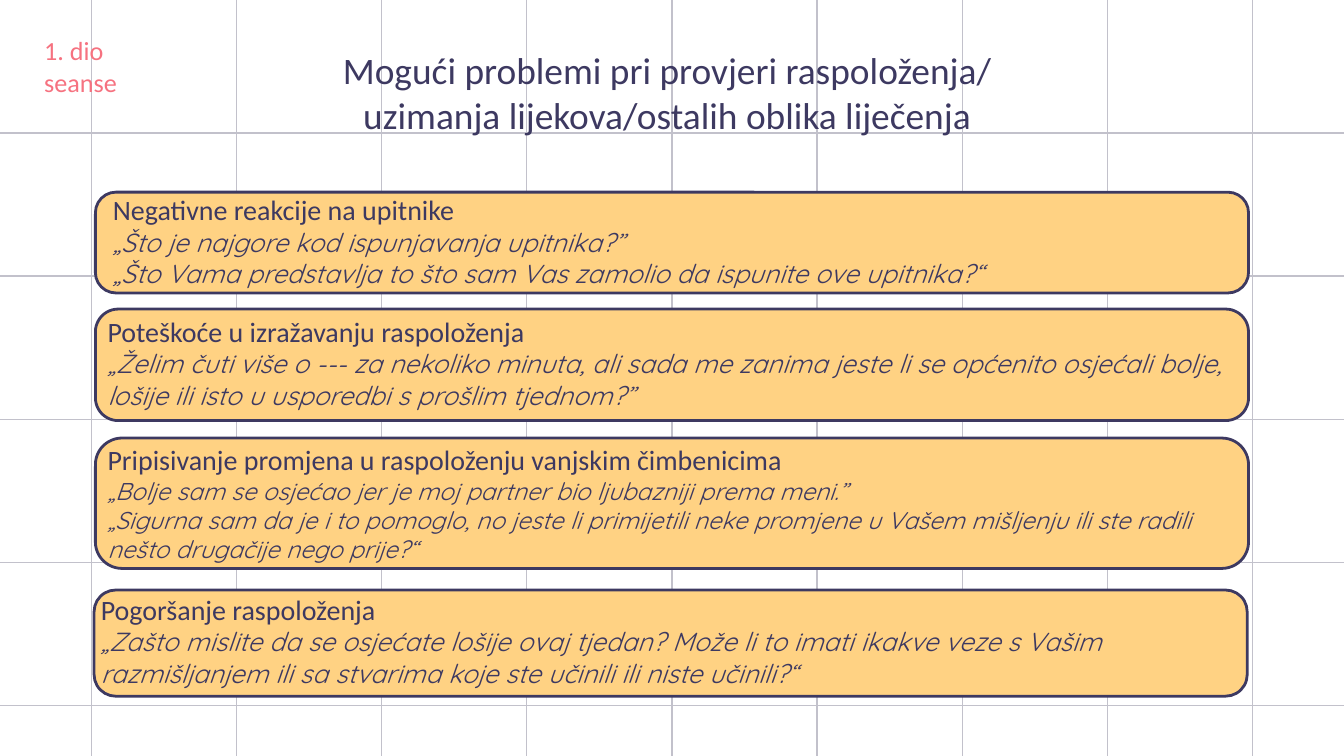
from dataclasses import dataclass

from pptx import Presentation
from pptx.dml.color import RGBColor
from pptx.enum.shapes import MSO_CONNECTOR, MSO_SHAPE
from pptx.enum.text import MSO_ANCHOR, MSO_AUTO_SIZE, PP_ALIGN
from pptx.oxml.ns import qn
from pptx.util import Inches, Pt


@dataclass(frozen=True)
class Theme:
    ink: RGBColor = RGBColor.from_string("3D3961")
    card: RGBColor = RGBColor.from_string("FFD283")
    grid: RGBColor = RGBColor.from_string("C2C1CB")
    accent: RGBColor = RGBColor.from_string("F67280")
    plain: str = "Calibri"
    quote: str = "Quicksand"
    title_size: int = 20
    heading_size: int = 15
    quote_size: int = 14
    small_quote_size: int = 13
    tag_size: int = 14


THEME = Theme()
WIDTH = 10
HEIGHT = WIDTH * 9 / 16

CARDS = [
    ((0.71, 1.43, 8.58, 0.75), (0.84, 1.32, 8.49, 0.94), THEME.quote_size,
     "Negativne reakcije na upitnike",
     ["„Što je najgore kod ispunjavanja upitnika?”",
      "„Što Vama predstavlja to što sam Vas zamolio da ispunite ove upitnika?“"]),
    ((0.71, 2.3, 8.58, 0.83), (0.8, 2.34, 8.44, 0.71), THEME.quote_size,
     "Poteškoće u izražavanju raspoloženja",
     ["„Želim čuti više o --- za nekoliko minuta, ali sada me zanima jeste li "
      "se općenito osjećali bolje, lošije ili isto u usporedbi s prošlim tjednom?”"]),
    ((0.71, 3.26, 8.58, 0.97), (0.8, 3.29, 8.49, 0.9), THEME.small_quote_size,
     "Pripisivanje promjena u raspoloženju vanjskim čimbenicima",
     ["„Bolje sam se osjećao jer je moj partner bio ljubazniji prema meni.”",
      "„Sigurna sam da je i to pomoglo, no jeste li primijetili neke promjene u "
      "Vašem mišljenju ili ste radili nešto drugačije nego prije?“"]),
    ((0.7, 4.39, 8.58, 0.79), (0.75, 4.44, 8.49, 0.65), THEME.quote_size,
     "Pogoršanje raspoloženja",
     ["„Zašto mislite da se osjećate lošije ovaj tjedan? Može li to imati ikakve "
      "veze s Vašim razmišljanjem ili sa stvarima koje ste učinili ili niste učinili?“"]),
]


def add_grid_line(s, x1, y1, x2, y2):
    line = s.shapes.add_connector(
        MSO_CONNECTOR.STRAIGHT, Inches(x1), Inches(y1), Inches(x2), Inches(y2))
    line.line.color.rgb = THEME.grid
    line.line.width = Pt(0.75)
    sp_pr = line._element.spPr
    sp_pr.append(sp_pr.makeelement(qn("a:effectLst"), {}))


def add_grid(s):
    for i in range(9):
        x = 0.68 + 1.08 * i
        add_grid_line(s, x, -0.2, x, 5.77)
    for i in range(5):
        y = 0.99 + 1.065 * i
        add_grid_line(s, -0.18, y, 10.18, y)


def add_card(s, box):
    sp = s.shapes.add_shape(MSO_SHAPE.ROUNDED_RECTANGLE, *map(Inches, box))
    sp.adjustments[0] = 0.204
    sp.shadow.inherit = False
    sp.fill.solid()
    sp.fill.fore_color.rgb = THEME.card
    sp.line.color.rgb = THEME.ink
    sp.line.width = Pt(1.5)


def place_placeholder(s, sp, box):
    s.shapes._spTree.append(sp._element)
    sp.left, sp.top, sp.width, sp.height = map(Inches, box)
    tf = sp.text_frame
    tf.margin_left = tf.margin_top = tf.margin_right = tf.margin_bottom = 0
    tf.vertical_anchor = MSO_ANCHOR.MIDDLE
    tf.word_wrap = True
    tf.auto_size = MSO_AUTO_SIZE.NONE
    return tf


def format_paragraph(p, font, size, color, italic=False, align=PP_ALIGN.LEFT):
    p_pr = p._p.get_or_add_pPr()
    p_pr.set("marL", "0")
    p_pr.set("indent", "0")
    p_pr.append(p_pr.makeelement(qn("a:buNone"), {}))
    p.alignment = align
    p.space_before = Pt(0)
    p.font.name = font
    p.font.size = Pt(size)
    p.font.bold = False
    p.font.italic = italic
    p.font.color.rgb = color


def add_title(s, text, box):
    p = place_placeholder(s, s.shapes.title, box).paragraphs[0]
    p.text = text
    format_paragraph(p, THEME.plain, THEME.title_size, THEME.ink, align=PP_ALIGN.CENTER)


def fill_body(s, sp, box, quote_size, heading, quotes):
    tf = place_placeholder(s, sp, box)
    p = tf.paragraphs[0]
    p.text = heading
    format_paragraph(p, THEME.plain, THEME.heading_size, THEME.ink)
    for quote in quotes:
        p = tf.add_paragraph()
        p.text = quote
        format_paragraph(p, THEME.quote, quote_size, THEME.ink, italic=True)


def add_tag(s, text, box):
    tf = s.shapes.add_textbox(*map(Inches, box)).text_frame
    tf.word_wrap = True
    p = tf.paragraphs[0]
    p.text = text
    format_paragraph(p, THEME.plain, THEME.tag_size, THEME.accent)


def main():
    prs = Presentation()
    prs.slide_width, prs.slide_height = Inches(WIDTH), Inches(HEIGHT)
    s = prs.slides.add_slide(prs.slide_layouts.get_by_name("Comparison"))
    bodies = [sp for sp in s.placeholders if sp.placeholder_format.idx > 0]

    add_grid(s)
    add_title(s, "Mogući problemi pri provjeri raspoloženja/\n"
                 "uzimanja lijekova/ostalih oblika liječenja", (0.75, 0.37, 8.43, 0.63))
    for sp, (card_box, text_box, quote_size, heading, quotes) in zip(bodies, CARDS):
        add_card(s, card_box)
        fill_body(s, sp, text_box, quote_size, heading, quotes)
    add_tag(s, "1. dio seanse", (0.23, 0.21, 1.19, 0.34))

    prs.save("out.pptx")


if __name__ == "__main__":
    main()
